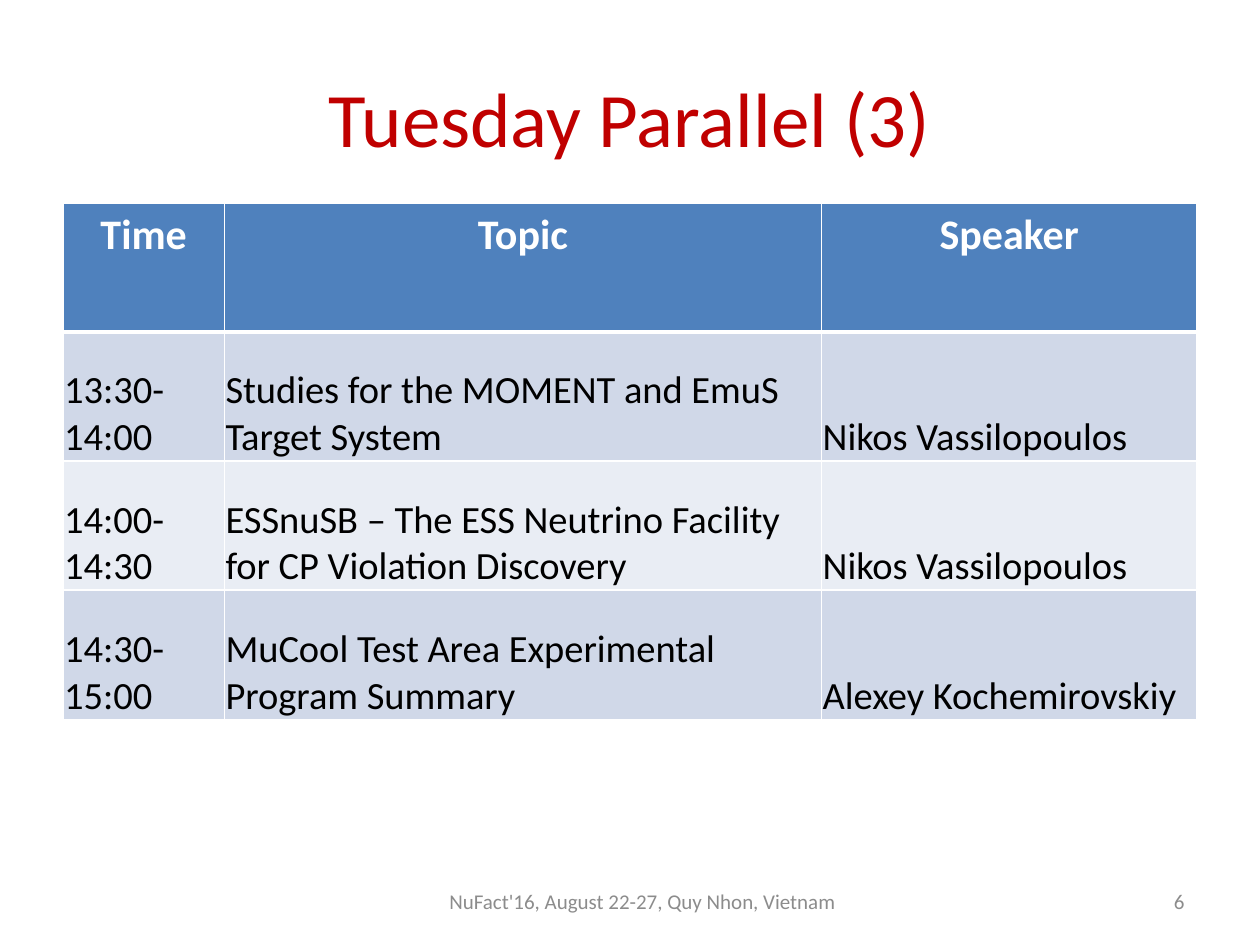
from lxml import etree
from pptx import Presentation
from pptx import util as u
from pptx.dml.color import RGBColor
from pptx.enum import text
from pptx.oxml import ns

RED = RGBColor(0xC0, 0x00, 0x00)
WHITE = RGBColor(0xFF, 0xFF, 0xFF)
BLACK = RGBColor(0x00, 0x00, 0x00)
GREY = RGBColor(0x8C, 0x8C, 0x8C)
HEADER_BLUE = RGBColor(0x4F, 0x81, 0xBD)
BANDS = (RGBColor(0xD0, 0xD8, 0xE8), RGBColor(0xE9, 0xED, 0xF4))

LEFT, CENTER, RIGHT = (text.PP_ALIGN.LEFT, text.PP_ALIGN.CENTER,
                       text.PP_ALIGN.RIGHT)
MIDDLE = text.MSO_ANCHOR.MIDDLE

COLUMN_WIDTHS = (1.28, 4.74, 2.98)
ROW_HEIGHT = 1.025
HEADINGS = ("Time", "Topic", "Speaker")
TALKS = (
    ("13:30-14:00", "Studies for the MOMENT and EmuS Target System",
     "Nikos Vassilopoulos"),
    ("14:00-14:30",
     "ESSnuSB – The ESS Neutrino Facility for CP Violation Discovery",
     "Nikos Vassilopoulos"),
    ("14:30-15:00", "MuCool Test Area Experimental Program Summary",
     "Alexey Kochemirovskiy"),
)


class SlideBuilder:
    font = "Calibri"

    def __init__(self, presentation):
        # Layout 5 is title only
        self.slide = presentation.slides.add_slide(presentation.slide_layouts[5])

    def add_words(self, frame, words, size, color, align, bold=False):
        paragraph = frame.paragraphs[0]
        paragraph.alignment = align
        run = paragraph.add_run()
        run.text = words
        run.font.name = self.font
        run.font.size = u.Pt(size)
        run.font.bold = bold
        run.font.color.rgb = color

    def title(self, words, box):
        shape = self.slide.shapes.title
        shape.left, shape.top, shape.width, shape.height = map(u.Inches, box)
        shape.text_frame.vertical_anchor = MIDDLE
        self.add_words(shape.text_frame, words, 44, RED, CENTER)

    def footer(self, words, box, align):
        shape = self.slide.shapes.add_textbox(*map(u.Inches, box))
        shape.text_frame.word_wrap = True
        shape.text_frame.vertical_anchor = MIDDLE
        self.add_words(shape.text_frame, words, 12, GREY, align)

    def borders(self, cell, bottom_width, top_width):
        properties = cell._tc.get_or_add_tcPr()
        widths = {"lnL": 1, "lnR": 1, "lnT": top_width, "lnB": bottom_width}
        for side, width in widths.items():
            line = etree.SubElement(properties, ns.qn(f"a:{side}"),
                                    w=str(u.Pt(width)))
            fill = etree.SubElement(line, ns.qn("a:solidFill"))
            etree.SubElement(fill, ns.qn("a:srgbClr"), val=str(WHITE))

    def fill(self, cell, color):
        cell.fill.solid()
        cell.fill.fore_color.rgb = color

    def header_cell(self, cell, words):
        self.borders(cell, bottom_width=3, top_width=1)
        self.fill(cell, HEADER_BLUE)
        self.add_words(cell.text_frame, words, 24, WHITE, CENTER, bold=True)

    def body_cell(self, cell, words, row):
        self.borders(cell, bottom_width=1, top_width=3 if row == 0 else 1)
        self.fill(cell, BANDS[row % 2])
        cell.vertical_anchor = text.MSO_ANCHOR.BOTTOM
        cell.margin_left = cell.margin_right = cell.margin_top = u.Inches(0.01)
        cell.margin_bottom = 0
        self.add_words(cell.text_frame, words, 22, BLACK, LEFT)

    def schedule(self, left, top):
        row_count = len(TALKS) + 1
        table = self.slide.shapes.add_table(
            row_count, len(HEADINGS), u.Inches(left), u.Inches(top),
            u.Inches(sum(COLUMN_WIDTHS)), u.Inches(row_count * ROW_HEIGHT)).table
        for column, width in zip(table.columns, COLUMN_WIDTHS):
            column.width = u.Inches(width)
        for row in table.rows:
            row.height = u.Inches(ROW_HEIGHT)
        for column, heading in enumerate(HEADINGS):
            self.header_cell(table.cell(0, column), heading)
        for row, talk in enumerate(TALKS):
            for column, words in enumerate(talk):
                self.body_cell(table.cell(row + 1, column), words, row)


def main():
    presentation = Presentation()
    presentation.slide_width = u.Inches(10)
    presentation.slide_height = u.Inches(7.5)
    builder = SlideBuilder(presentation)

    # Title and schedule
    builder.title("Tuesday Parallel (3)", (0.5, 0.3, 9, 1.25))
    builder.schedule(0.5, 1.61)

    # Footer and slide number
    builder.footer("NuFact'16, August 22-27, Quy Nhon, Vietnam",
                   (3.42, 6.95, 3.36, 0.4), CENTER)
    builder.footer("6", (7.17, 6.95, 2.33, 0.4), RIGHT)

    presentation.save("out.pptx")


if __name__ == "__main__":
    main()
